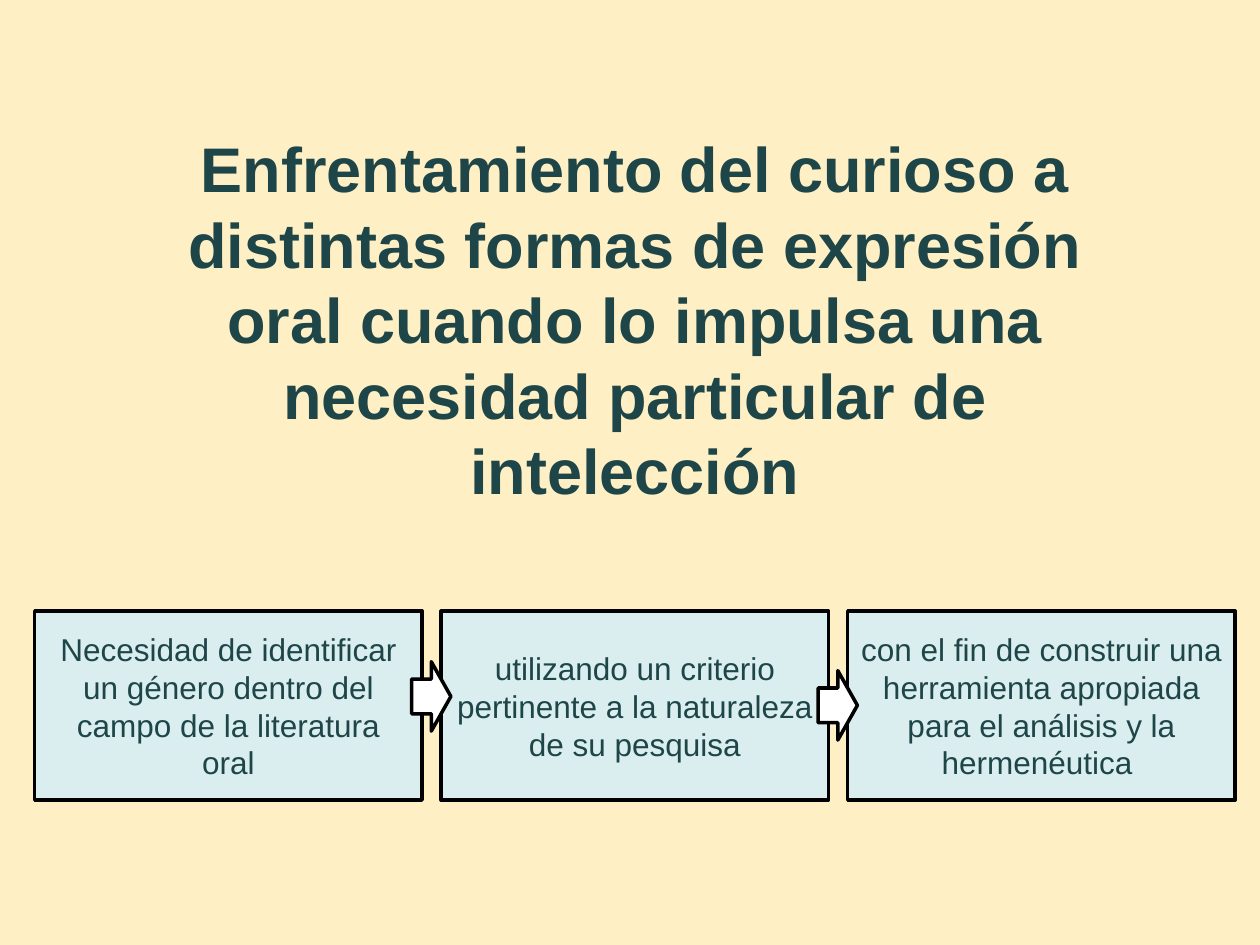
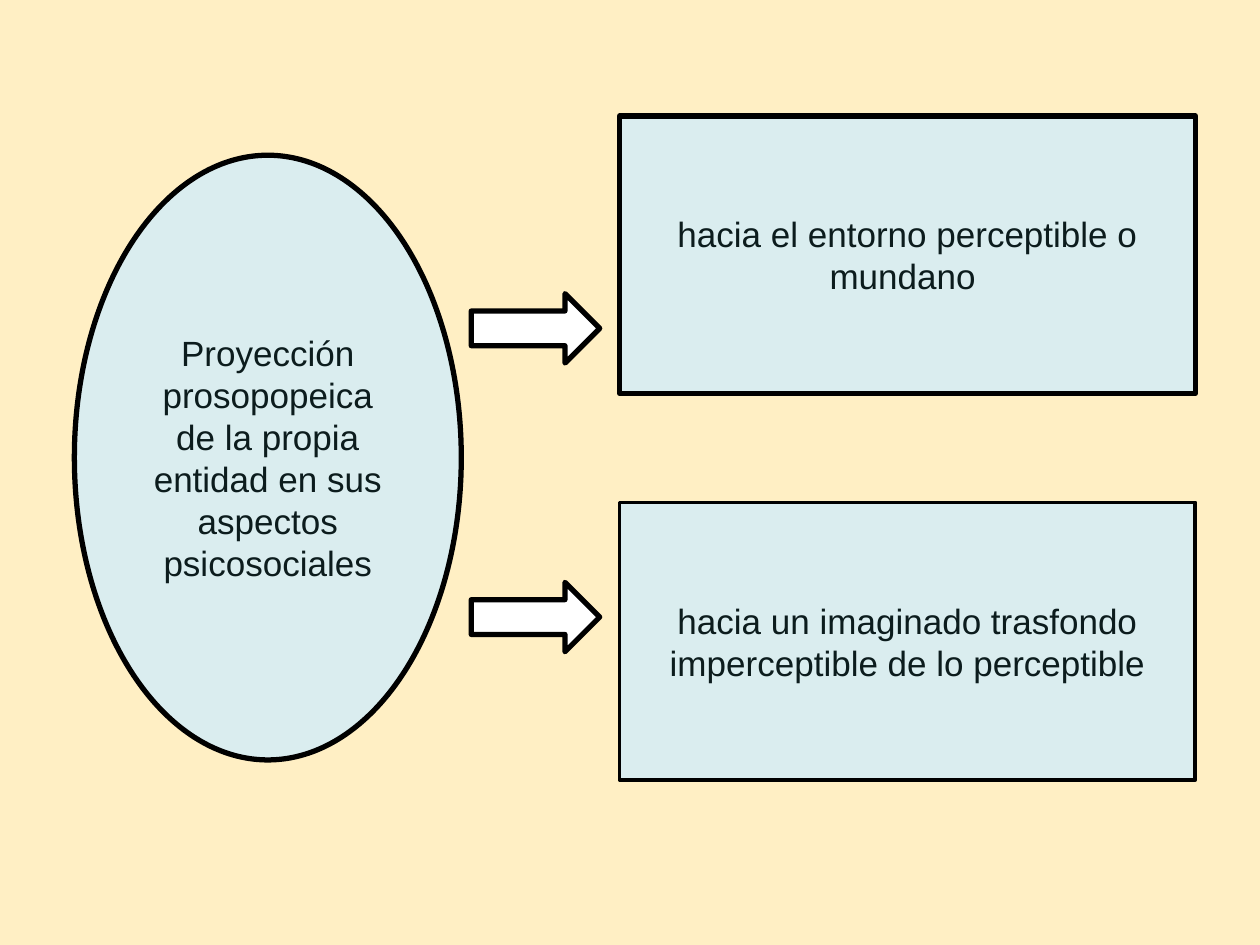
from pptx import Presentation
from pptx.dml.color import RGBColor
from pptx.enum import shapes, text
from pptx.util import Cm, Pt

KIND = shapes.MSO_SHAPE
CREAM, PALE, WHITE, BLACK = "FFEFC4", "DAEDEF", "FFFFFF", "000000"
TEAL, DARK = "1E4649", "0C1C1D"
FONT = "Arial"


def paint(target, color):
    target.solid()
    target.fore_color.rgb = RGBColor.from_string(color)


def write(shape, words, size, color, bold=False):
    frame = shape.text_frame
    frame.word_wrap = True
    frame.vertical_anchor = text.MSO_ANCHOR.MIDDLE
    para = frame.paragraphs[0]
    para.alignment = text.PP_ALIGN.CENTER
    run = para.add_run()
    run.text = words
    font = run.font
    font.name, font.size, font.bold = FONT, Pt(size), bold
    paint(font.fill, color)


def draw(slide, kind, box, fill, line):
    shape = slide.shapes.add_shape(kind, *map(Cm, box))
    shape.shadow.inherit = False
    paint(shape.fill, fill)
    paint(shape.line.fill, BLACK)
    shape.line.width = Pt(line)
    return shape


def arrow(slide, box, line):
    draw(slide, KIND.RIGHT_ARROW, box, WHITE, line)


def title(slide, box, words):
    shape = slide.shapes.add_textbox(*map(Cm, box))
    write(shape, words, 36, TEAL, True)


def chain(slide, box, steps):
    left, top, width, height = box
    wide, line = 7.81, 2
    pitch = (width - wide) / (len(steps) - 1)
    for i, words in enumerate(steps):
        shape = draw(slide, KIND.RECTANGLE,
                     (left + i * pitch, top, wide, height), PALE, line)
        write(shape, words, 18, TEAL)
    for i, drop in enumerate((1.02, 1.2)):
        arrow(slide, (left + 7.6 + i * pitch, top + drop, 0.79, 1.4), line)


def split(slide, box, source, goals):
    left, top, width, height = box
    wide, tall = 11.61, 5.59
    oval = draw(slide, KIND.OVAL, (left, top + 0.79, 7.8, 12.19), PALE, 3)
    write(oval, source, 20, DARK)
    pitch = (height - tall) / (len(goals) - 1)
    for i, (words, line) in enumerate(goals):
        shape = draw(slide, KIND.RECTANGLE,
                     (left + width - wide, top + i * pitch, wide, tall),
                     PALE, line)
        write(shape, words, 20, DARK)
        arrow(slide, (left + 8, top + 3.58 + i * 5.82, 2.59, 1.4), 3)


def page(deck):
    slide = deck.slides.add_slide(deck.slide_layouts[6])
    paint(slide.background.fill, CREAM)
    return slide


def main():
    deck = Presentation()
    deck.slide_width, deck.slide_height = Cm(25.4), Cm(19.05)

    slide = page(deck)
    title(slide, (2.7, 2.72, 20.2, 7.4),
          "Enfrentamiento del curioso a distintas formas de expresión oral "
          "cuando lo impulsa una necesidad particular de intelección")
    chain(slide, (0.7, 12.32, 24.2, 3.81), [
        "Necesidad de identificar un género dentro del campo de la "
        "literatura oral",
        "utilizando un criterio pertinente a la naturaleza de su pesquisa",
        "con el fin de construir una herramienta apropiada para el análisis "
        "y la hermenéutica ",
    ])

    slide = page(deck)
    split(slide, (1.5, 2.34, 22.6, 13.38),
          "Proyección prosopopeica de la propia entidad en sus aspectos "
          "psicosociales",
          [("hacia el entorno perceptible o mundano ", 3),
           ("hacia un imaginado trasfondo imperceptible de lo perceptible",
            2.25)])

    deck.save("out.pptx")


if __name__ == "__main__":
    main()
